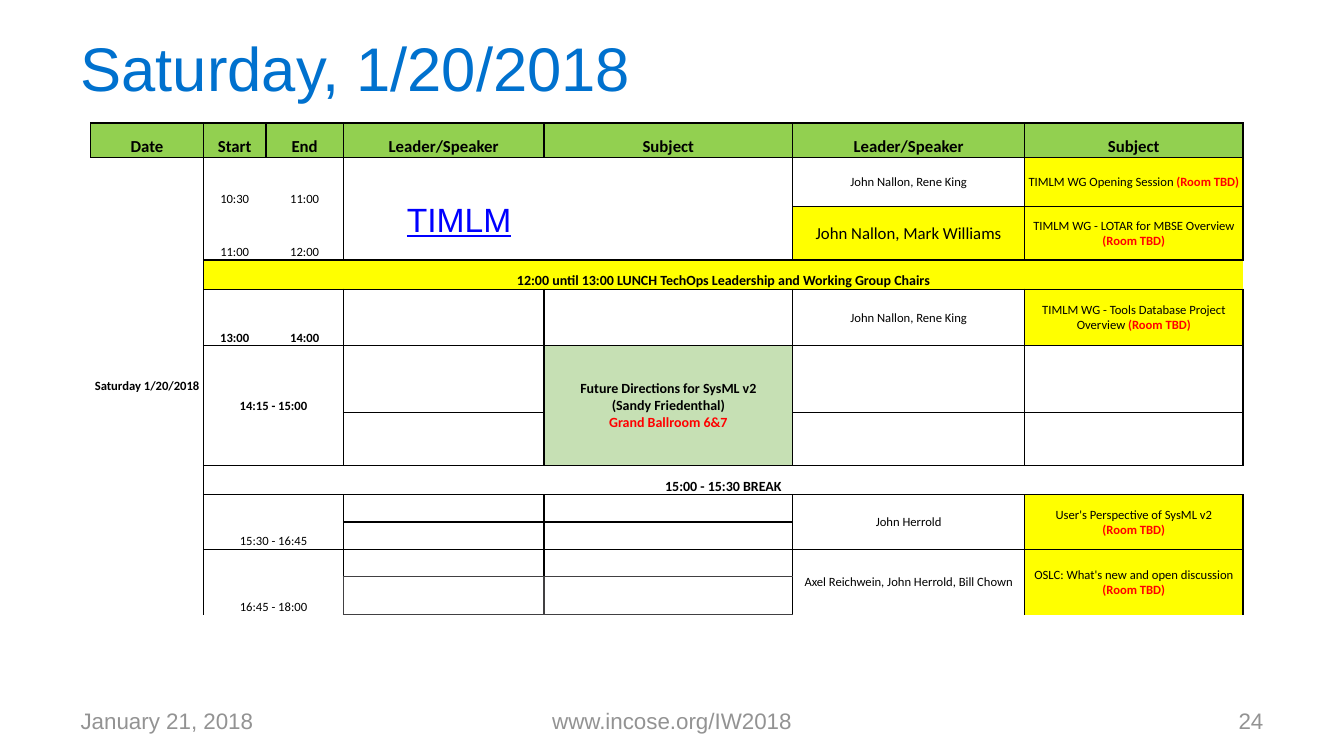
from itertools import product
from lxml.etree import SubElement
from pptx import Presentation
from pptx.dml.color import RGBColor
from pptx.enum.text import MSO_ANCHOR, PP_ALIGN
from pptx.oxml.ns import qn
from pptx.util import Inches, Pt

BLACK, GRAY, RED = "000000", "414042", "FF0000"
GREEN, YELLOW, PALE_GREEN = "92D050", "FFFF00", "C6E0B4"
TOP, MIDDLE, BOTTOM = MSO_ANCHOR.TOP, MSO_ANCHOR.MIDDLE, MSO_ANCHOR.BOTTOM

SLIDE_SIZE = (13.34, 7.5)
TABLE_ORIGIN = (0.9, 1.22)
COLUMN_WIDTHS = [1.12, 0.62, 0.77, 1.99, 2.47, 2.3, 2.17]
ROW_HEIGHTS = [0.34, 0.49, 0.53, 0.29, 0.56, 0.66, 0.53, 0.29, 0.27, 0.27, 0.27, 0.38]
GRAY_EDGE = 11

HEADERS = ["Date", "Start", "End", "Leader/Speaker", "Subject", "Leader/Speaker", "Subject"]

STYLES = {
    "header": (12, True, BOTTOM, GREEN),
    "day": (9, True, MIDDLE, None),
    "time": (9, False, BOTTOM, None),
    "bold time": (9, True, BOTTOM, None),
    "slot": (9, True, MIDDLE, None),
    "lunch": (10, True, BOTTOM, YELLOW),
    "break": (10, True, BOTTOM, None),
    "keynote": (10, True, MIDDLE, PALE_GREEN),
    "speaker": (9, False, MIDDLE, None),
    "large speaker": (12, False, MIDDLE, YELLOW),
    "session": (9, False, MIDDLE, YELLOW),
    "empty": (9, False, TOP, None),
}

# row, column, rows spanned, columns spanned, style, text ("|" starts red), open sides
ENTRIES = [
    (1, 0, 11, 1, "day", "Saturday 1/20/2018", "L"),
    (1, 1, 1, 1, "time", "10:30", "RB"),
    (1, 2, 1, 1, "time", "11:00", "LB"),
    (1, 3, 1, 1, "empty", "", "RB"),
    (1, 4, 1, 1, "empty", "", "LB"),
    (1, 5, 1, 1, "speaker", "John Nallon, Rene King", ""),
    (1, 6, 1, 1, "session", "TIMLM WG Opening Session |(Room TBD)", ""),
    (2, 1, 1, 1, "time", "11:00", "RT"),
    (2, 2, 1, 1, "time", "12:00", "LT"),
    (2, 3, 1, 1, "empty", "", "RT"),
    (2, 4, 1, 1, "empty", "", "LT"),
    (2, 5, 1, 1, "large speaker", "John Nallon, Mark Williams", ""),
    (2, 6, 1, 1, "session", "TIMLM WG - LOTAR for MBSE Overview |(Room TBD)", ""),
    (3, 1, 1, 6, "lunch",
     "12:00 until 13:00 LUNCH TechOps Leadership and Working Group Chairs", ""),
    (4, 1, 1, 1, "bold time", "13:00", "R"),
    (4, 2, 1, 1, "bold time", "14:00", "L"),
    (4, 5, 1, 1, "speaker", "John Nallon, Rene King", ""),
    (4, 6, 1, 1, "session", "TIMLM WG - Tools Database Project Overview |(Room TBD)", ""),
    (5, 1, 2, 2, "slot", "14:15 - 15:00", ""),
    (5, 4, 2, 1, "keynote",
     "Future Directions for SysML v2\n(Sandy Friedenthal)\n|Grand Ballroom 6&7", ""),
    (7, 1, 1, 6, "break", "15:00 - 15:30 BREAK", ""),
    (8, 1, 2, 2, "time", "15:30 - 16:45", ""),
    (8, 5, 2, 1, "speaker", "John Herrold", ""),
    (8, 6, 2, 1, "session", "User's Perspective of SysML v2\n|(Room TBD)", ""),
    (10, 1, 2, 2, "time", "16:45 - 18:00", ""),
    (10, 5, 2, 1, "speaker", "Axel Reichwein, John Herrold, Bill Chown", ""),
    (10, 6, 2, 1, "session", "OSLC: What's new and open discussion |(Room TBD)", ""),
]

WIDE_INSETS = (0.13, 0.07)
PLAIN_INSETS = (0.1, 0.05)
FOOTER = {"size": 16, "color": "939393"}
LABELS = [
    ("Saturday, 1/20/2018", (0.67, 0.04, 12.01, 1.25), PP_ALIGN.LEFT, MIDDLE, WIDE_INSETS,
     {"size": 44, "color": "0071CE"}),
    ("TIMLM", (3.94, 1.92, 1.25, 0.5), PP_ALIGN.LEFT, TOP, PLAIN_INSETS,
     {"size": 24, "color": "0000FF", "underline": True}),
    ("January 21, 2018", (0.67, 6.95, 3.11, 0.4), PP_ALIGN.LEFT, MIDDLE, WIDE_INSETS, FOOTER),
    ("www.incose.org/IW2018", (4.56, 6.95, 4.22, 0.4), PP_ALIGN.CENTER, MIDDLE, WIDE_INSETS, FOOTER),
    ("24", (9.56, 6.95, 3.11, 0.4), PP_ALIGN.RIGHT, MIDDLE, WIDE_INSETS, FOOTER),
]


def color(value):
    return RGBColor.from_string(value)


def set_attributes(target, values):
    for name, value in values.items():
        setattr(target, name, value)


def add_run(paragraph, text, format_values):
    run = paragraph.add_run()
    run.text = text
    values = dict(format_values)
    run.font.color.rgb = color(values.pop("color"))
    values["size"] = Pt(values["size"])
    set_attributes(run.font, values)


def set_borders(cell, row, sides):
    properties = cell._tc.get_or_add_tcPr()
    for index, side in enumerate("LRTB"):
        line = SubElement(properties, qn(f"a:ln{side}"), w=str(Pt(1)))
        properties.remove(line)
        properties.insert(index, line)
        if side in sides:
            shade = GRAY if row + (side == "B") >= GRAY_EDGE else BLACK
            fill = SubElement(line, qn("a:solidFill"))
            SubElement(fill, qn("a:srgbClr"), val=shade)
        else:
            SubElement(line, qn("a:noFill"))


def write_cell(cell, style, text):
    size, bold, anchor, fill = STYLES[style]
    set_attributes(cell, {
        "vertical_anchor": anchor, "margin_left": Inches(0.01), "margin_right": Inches(0.01),
        "margin_top": Inches(0.01), "margin_bottom": 0})
    if not text:
        return
    for index, line in enumerate(text.split("\n")):
        frame = cell.text_frame
        paragraph = frame.add_paragraph() if index else frame.paragraphs[0]
        paragraph.alignment = PP_ALIGN.CENTER
        plain, _, red = line.partition("|")
        for part, shade, weight in ((plain, BLACK, bold), (red, RED, True)):
            if part:
                add_run(paragraph, part,
                        {"size": size, "name": "Calibri", "bold": weight, "color": shade})


def place_entry(table, row, column, row_span, column_span, style, text, open_sides):
    last_row, last_column = row + row_span - 1, column + column_span - 1
    origin = table.cell(row, column)
    if row_span * column_span > 1:
        origin.merge(table.cell(last_row, last_column))
    write_cell(origin, style, text)
    fill = STYLES[style][3]
    for r, c in product(range(row, last_row + 1), range(column, last_column + 1)):
        cell = table.cell(r, c)
        if fill:
            cell.fill.solid()
            cell.fill.fore_color.rgb = color(fill)
        else:
            cell.fill.background()
        on_edge = {"L": c == column, "R": c == last_column, "T": r == row, "B": r == last_row}
        set_borders(cell, r, [s for s in on_edge if on_edge[s] and s not in open_sides])
        if not cell.text_frame.text:
            write_cell(cell, "empty", "")
            cell.text_frame.paragraphs[0]._p.get_or_add_endParaRPr().set("sz", "900")


def add_schedule(slide):
    size = (sum(COLUMN_WIDTHS), sum(ROW_HEIGHTS))
    table = slide.shapes.add_table(len(ROW_HEIGHTS), len(COLUMN_WIDTHS),
                                   *map(Inches, TABLE_ORIGIN + size)).table
    set_attributes(table, {"first_row": False, "horz_banding": False})
    for column, width in zip(table.columns, COLUMN_WIDTHS):
        column.width = Inches(width)
    for row, height in zip(table.rows, ROW_HEIGHTS):
        row.height = Inches(height)
    headers = [(0, c, 1, 1, "header", text, "") for c, text in enumerate(HEADERS)]
    entries = headers + ENTRIES
    taken = {(r + i, c + j) for r, c, rows, columns, *_ in entries
             for i, j in product(range(rows), range(columns))}
    grid = product(range(len(ROW_HEIGHTS)), range(len(COLUMN_WIDTHS)))
    blanks = [(r, c, 1, 1, "empty", "", "") for r, c in grid if (r, c) not in taken]
    for entry in entries + blanks:
        place_entry(table, *entry)


def add_label(slide, text, box, alignment, anchor, insets, format_values):
    frame = slide.shapes.add_textbox(*map(Inches, box)).text_frame
    across, down = map(Inches, insets)
    set_attributes(frame, {
        "word_wrap": True, "vertical_anchor": anchor, "margin_left": across,
        "margin_right": across, "margin_top": down, "margin_bottom": down})
    paragraph = frame.paragraphs[0]
    paragraph.alignment = alignment
    add_run(paragraph, text, {"name": "Arial", **format_values})


def main():
    presentation = Presentation()
    presentation.slide_width, presentation.slide_height = map(Inches, SLIDE_SIZE)
    slide = presentation.slides.add_slide(presentation.slide_layouts[6])
    add_schedule(slide)
    for label in LABELS:
        add_label(slide, *label)
    presentation.save("out.pptx")


if __name__ == "__main__":
    main()
